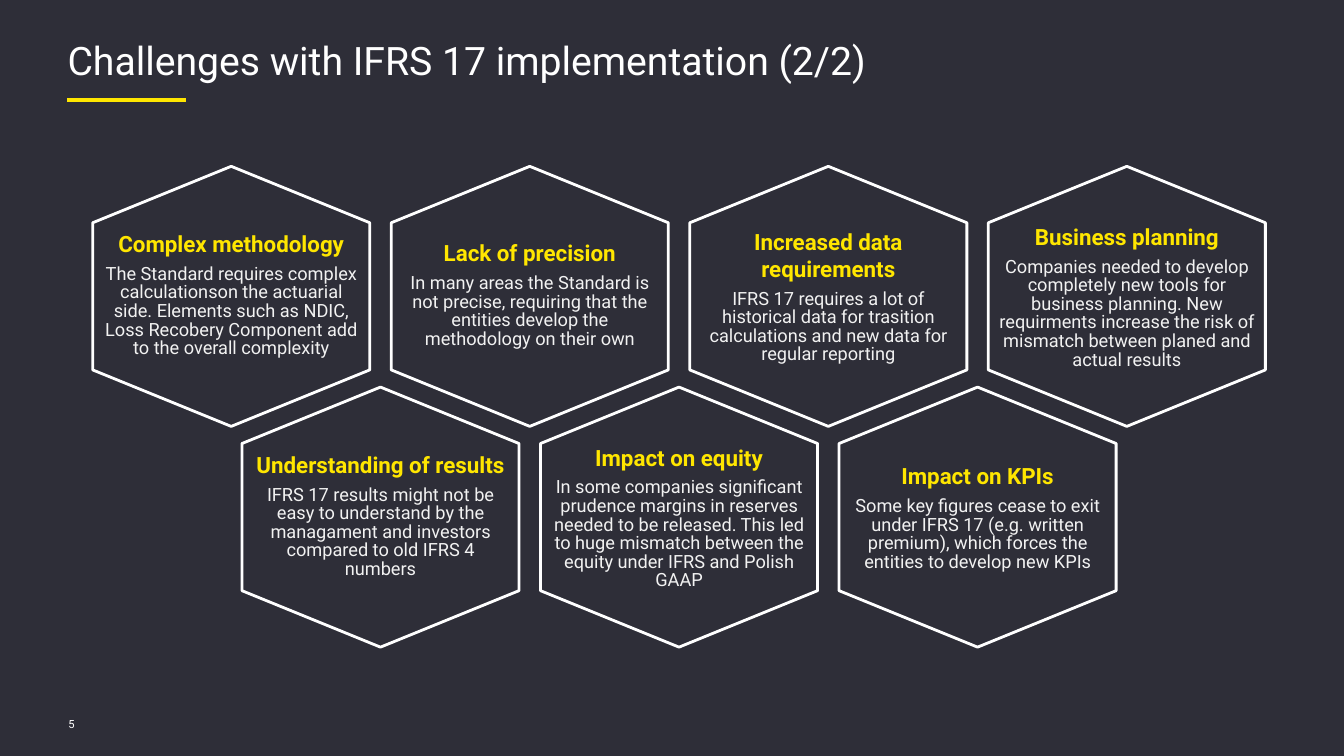
"""Build the slide on IFRS 17 implementation challenges as a honeycomb of hexagons."""
from dataclasses import dataclass

from lxml import etree
from pptx import Presentation
from pptx.dml.color import RGBColor
from pptx.enum.shapes import MSO_CONNECTOR
from pptx.enum.text import MSO_ANCHOR, MSO_AUTO_SIZE, PP_ALIGN
from pptx.oxml.ns import qn
from pptx.shapes.autoshape import Shape
from pptx.slide import Slide
from pptx.text.text import TextFrame, _Paragraph
from pptx.util import Inches, Pt

LEFT, CENTER = PP_ALIGN.LEFT, PP_ALIGN.CENTER
TOP, MIDDLE = MSO_ANCHOR.TOP, MSO_ANCHOR.MIDDLE
STRAIGHT = MSO_CONNECTOR.STRAIGHT
NO_AUTOFIT = MSO_AUTO_SIZE.NONE

FONT = "Roboto"
COLORS = {"background": "2E2E38", "accent": "FFE600", "white": "FFFFFF", "body": "F2F2F2"}
TIGHT = 0.85

HEXAGON_WIDTH, HEXAGON_HEIGHT, SHOULDER = 2.75, 2.58, 0.56
FIRST_LEFT, LAST_LEFT = 0.92, 9.81
HALF_PITCH = (LAST_LEFT - FIRST_LEFT) / 6
ROW_TOPS = (1.65, 3.84)


@dataclass(frozen=True)
class Challenge:
    heading: str
    body: str
    heading_spacing: float = 1.0


ROWS = (
    (
        Challenge(
            "Complex methodology",
            "The Standard requires complex calculationson the actuarial side. Elements such as "
            "NDIC, Loss Recobery Component add to the overall complexity",
            TIGHT,
        ),
        Challenge(
            "Lack of precision",
            "In many areas the Standard is not precise, requiring that the entities develop "
            "the methodology on their own",
            TIGHT,
        ),
        Challenge(
            "Increased data requirements",
            "IFRS 17 requires a lot of historical data for trasition calculations and new data "
            "for regular reporting",
        ),
        Challenge(
            "Business planning",
            "Companies needed to develop completely new tools for business planning. New "
            "requirments increase the risk of mismatch between planed and actual results",
        ),
    ),
    (
        Challenge(
            "Understanding of results",
            "IFRS 17 results might not be easy to understand by the managament and investors "
            "compared to old IFRS 4 numbers",
            TIGHT,
        ),
        Challenge(
            "Impact on equity",
            "In some companies significant prudence margins in reserves needed to be released. "
            "This led to huge mismatch between the equity under IFRS and Polish GAAP",
        ),
        Challenge(
            "Impact on KPIs",
            "Some key figures cease to exit under IFRS 17 (e.g. written premium), which forces "
            "the entities to develop new KPIs",
        ),
    ),
)


def color(name: str) -> RGBColor:
    return RGBColor.from_string(COLORS[name])


def write(
    paragraph: _Paragraph,
    text: str,
    *,
    size: float,
    color_name: str = "white",
    bold: bool = False,
    alignment: PP_ALIGN = LEFT,
    line_spacing: float = 1.0,
    space_after: float = 0,
) -> None:
    paragraph.alignment = alignment
    paragraph.line_spacing = line_spacing
    paragraph.space_before = Pt(0)
    paragraph.space_after = Pt(space_after)
    run = paragraph.add_run()
    run.text = text
    run.font.name = FONT
    run.font.size = Pt(size)
    run.font.bold = bold
    run.font.color.rgb = color(color_name)


def prepare_frame(frame: TextFrame, anchor: MSO_ANCHOR, side_margin: float = 0) -> None:
    frame.word_wrap = True
    frame.auto_size = NO_AUTOFIT
    frame.vertical_anchor = anchor
    frame.margin_left = frame.margin_right = Inches(side_margin)
    frame.margin_top = frame.margin_bottom = 0


def add_title(slide: Slide, text: str) -> None:
    title = slide.shapes.title
    title.left, title.top = Inches(0.67), Inches(0.43)
    title.width, title.height = Inches(12), Inches(0.65)
    prepare_frame(title.text_frame, TOP)
    write(title.text_frame.paragraphs[0], text, size=28, line_spacing=TIGHT)


def add_title_rule(slide: Slide) -> None:
    height = Inches(0.99)
    rule = slide.shapes.add_connector(STRAIGHT, Inches(0.67), height, Inches(1.85), height)
    rule.line.color.rgb = color("accent")
    rule.line.width = Pt(3)
    etree.SubElement(rule._element.spPr, qn("a:effectLst"))


def add_page_number(slide: Slide, number: str) -> None:
    box = slide.shapes.add_textbox(Inches(0.68), Inches(7.08), Inches(0.73), Inches(0.2))
    prepare_frame(box.text_frame, MIDDLE)
    write(box.text_frame.paragraphs[0], number, size=8)


def add_hexagon(slide: Slide, left: float, top: float) -> Shape:
    right, bottom = left + HEXAGON_WIDTH, top + HEXAGON_HEIGHT
    middle = left + HEXAGON_WIDTH / 2
    upper, lower = top + SHOULDER, bottom - SHOULDER
    corners = (
        (middle, top), (right, upper), (right, lower),
        (middle, bottom), (left, lower), (left, upper),
    )
    start, *others = [(Inches(x), Inches(y)) for x, y in corners]
    builder = slide.shapes.build_freeform(*start)
    builder.add_line_segments(others, close=True)
    hexagon = builder.convert_to_shape()
    hexagon.shadow.inherit = False
    hexagon.fill.background()
    hexagon.line.color.rgb = color("white")
    hexagon.line.width = Pt(2)
    return hexagon


def add_challenge(slide: Slide, challenge: Challenge, left: float, top: float) -> None:
    frame = add_hexagon(slide, left, top).text_frame
    prepare_frame(frame, MIDDLE, side_margin=0.1)
    write(frame.paragraphs[0], challenge.heading, size=16, color_name="accent", bold=True,
          alignment=CENTER, line_spacing=challenge.heading_spacing, space_after=6)
    write(frame.add_paragraph(), challenge.body, size=13, color_name="body",
          alignment=CENTER, line_spacing=TIGHT, space_after=6)


def main() -> None:
    presentation = Presentation()
    presentation.slide_width, presentation.slide_height = Inches(13.34), Inches(7.5)
    slide = presentation.slides.add_slide(presentation.slide_layouts.get_by_name("Title Only"))
    slide.background.fill.solid()
    slide.background.fill.fore_color.rgb = color("background")

    add_title_rule(slide)
    add_page_number(slide, "5")
    add_title(slide, "Challenges with IFRS 17 implementation (2/2)")
    for row, (top, challenges) in enumerate(zip(ROW_TOPS, ROWS)):
        for column, challenge in enumerate(challenges):
            add_challenge(slide, challenge, FIRST_LEFT + (2 * column + row) * HALF_PITCH, top)

    presentation.save("out.pptx")


if __name__ == "__main__":
    main()
